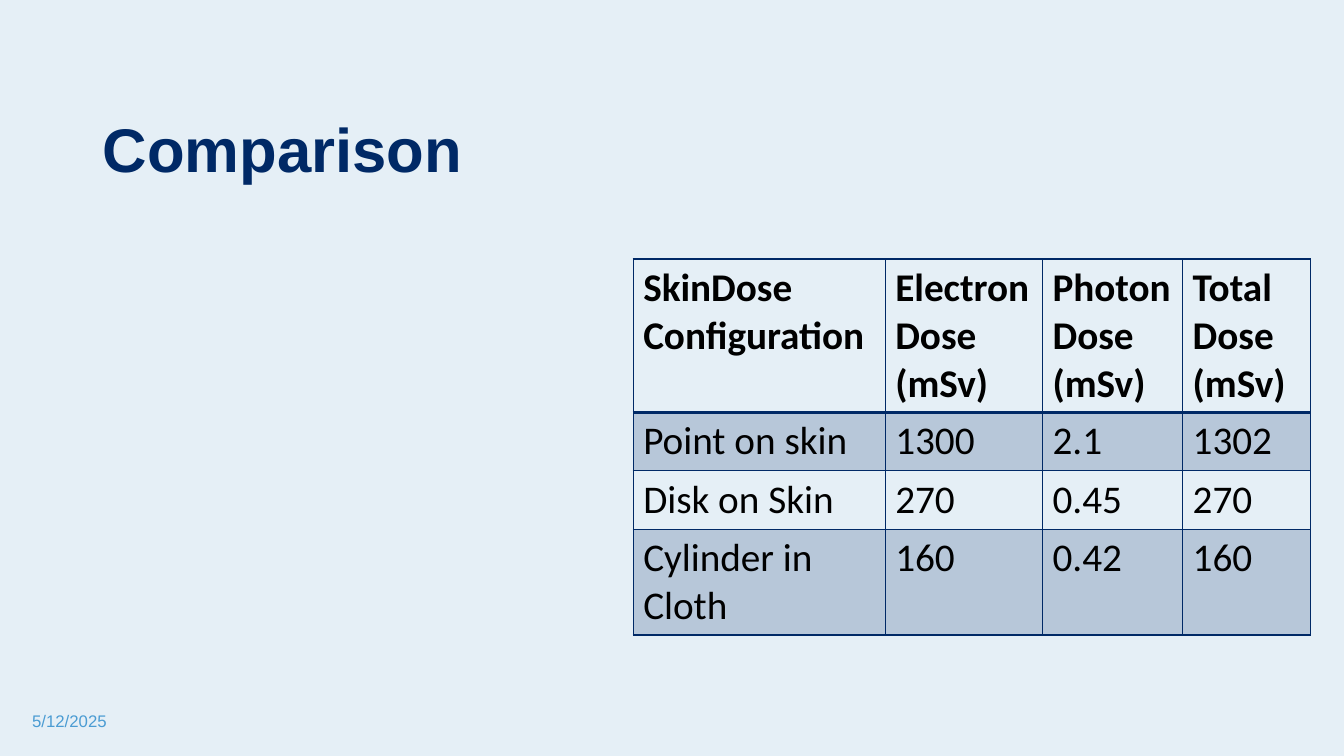
import pptx
import pptx.util
import pptx.dml.color
import pptx.enum.text
import pptx.oxml.ns
import lxml.etree

NAVY, SKY, PALE, BLACK = "002966", "4B9CD3", "E5EFF6", "000000"
inch = pptx.util.Inches


def rgb(hex_code):
    return pptx.dml.color.RGBColor.from_string(hex_code)


def add_text(paragraph, text, font_name, size, color, bold=False):
    run = paragraph.add_run()
    run.text = text
    run.font.name = font_name
    run.font.size = pptx.util.Pt(size)
    run.font.bold = bold
    run.font.color.rgb = rgb(color)


deck = pptx.Presentation()
deck.slide_width, deck.slide_height = inch(13.33), inch(7.5)
slide = deck.slides.add_slide(deck.slide_layouts[6])
slide.background.fill.solid()
slide.background.fill.fore_color.rgb = rgb(PALE)

# Heading and date
labels = [
    ("Comparison", (0.92, 0.96, 11.5, 1.1), 44, NAVY, True, 0.9),
    ("5/12/2025", (0.22, 6.95, 3, 0.4), 12, SKY, False, 1.0),
]
for text, area, size, color, bold, spacing in labels:
    frame = slide.shapes.add_textbox(*map(inch, area)).text_frame
    frame.word_wrap = True
    frame.vertical_anchor = pptx.enum.text.MSO_ANCHOR.MIDDLE
    frame.paragraphs[0].line_spacing = spacing
    add_text(frame.paragraphs[0], text, "Arial", size, color, bold)

# Dose table
doses = [
    ("SkinDose Configuration", "Electron Dose (mSv)", "Photon Dose (mSv)", "Total Dose (mSv)"),
    ("Point on skin", "1300", "2.1", "1302"),
    ("Disk on Skin", "270", "0.45", "270"),
    ("Cylinder in Cloth", "160", "0.42", "160"),
]
column_widths = [2.5, 1.56, 1.39, 1.27]
row_heights = [1.52, 0.58, 0.58, 1.05]
dose_table = slide.shapes.add_table(
    len(row_heights), len(column_widths), inch(6.28), inch(2.57),
    inch(sum(column_widths)), inch(sum(row_heights))).table
dose_table.horz_banding = False
dose_table.first_row = False
for column, width in zip(dose_table.columns, column_widths):
    column.width = inch(width)
for row, height in zip(dose_table.rows, row_heights):
    row.height = inch(height)

qn = pptx.oxml.ns.qn
for r, values in enumerate(doses):
    for c, value in enumerate(values):
        cell = dose_table.cell(r, c)
        # Slim side margins in the header keep each word whole
        if r == 0:
            cell.margin_right = inch(0.05)
        add_text(cell.text_frame.paragraphs[0], value, "Calibri", 28, BLACK, bold=r == 0)

        # Borders, with a heavier rule under the header
        properties = cell._tc.get_or_add_tcPr()
        for side in ("L", "R", "T", "B"):
            under_header = (r, side) in ((0, "B"), (1, "T"))
            line = lxml.etree.SubElement(properties, qn("a:ln" + side))
            line.set("w", str(pptx.util.Pt(2.25 if under_header else 1)))
            paint = lxml.etree.SubElement(line, qn("a:solidFill"))
            lxml.etree.SubElement(paint, qn("a:srgbClr")).set("val", NAVY)

        # Translucent navy on alternate rows
        if r % 2:
            cell.fill.solid()
            cell.fill.fore_color.rgb = rgb(NAVY)
            tint = properties.find(qn("a:solidFill")).find(qn("a:srgbClr"))
            lxml.etree.SubElement(tint, qn("a:alpha")).set("val", "20000")
        else:
            cell.fill.background()

deck.save("out.pptx")
